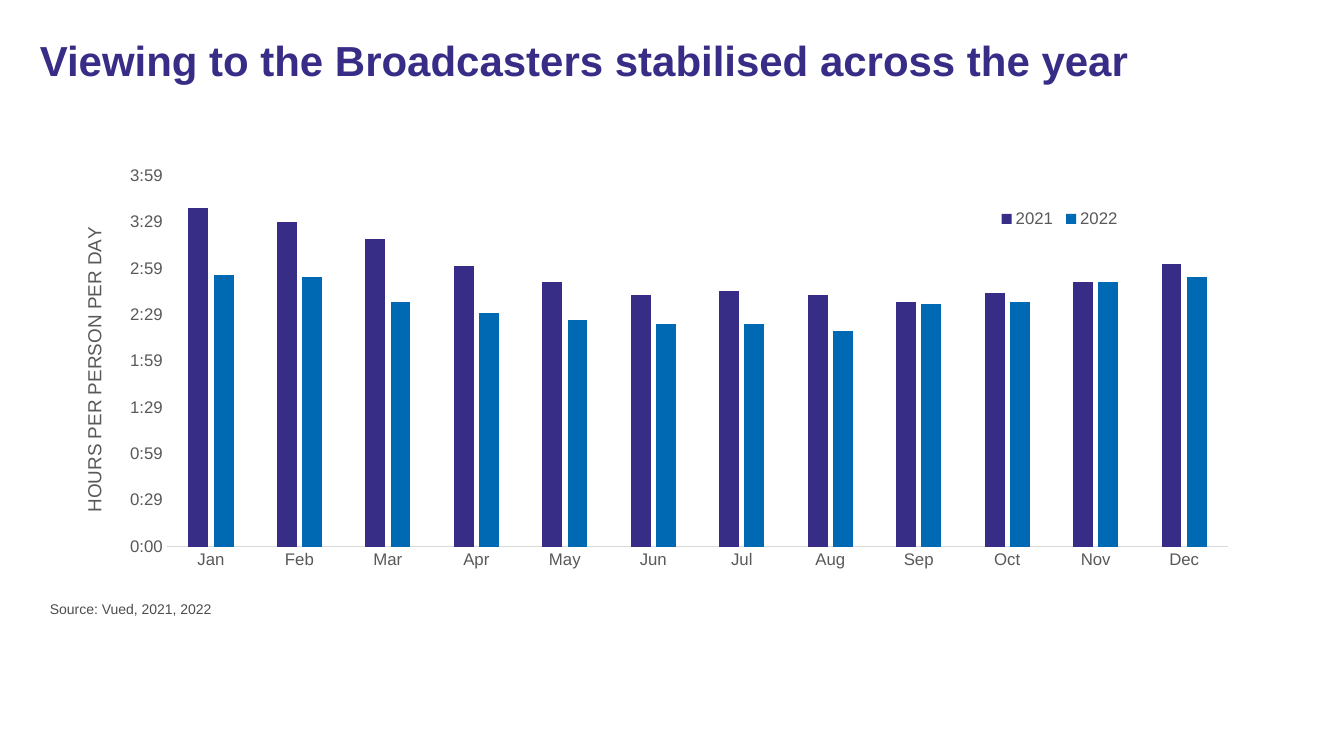
from lxml import etree
from pptx import Presentation
from pptx.chart.data import CategoryChartData
from pptx.dml.color import RGBColor
from pptx.enum.chart import XL_CHART_TYPE, XL_LEGEND_POSITION, XL_TICK_MARK
from pptx.enum.text import MSO_ANCHOR
from pptx.oxml.ns import qn
from pptx.util import Emu, Pt

COLUMNS = XL_CHART_TYPE.COLUMN_CLUSTERED
BOTTOM = XL_LEGEND_POSITION.BOTTOM
NO_TICK = XL_TICK_MARK.NONE
TOP = MSO_ANCHOR.TOP

EMU_PER_PX = 914400 / 100.8
FONT = "Arial"
COLORS = {
    "purple": "372D87",
    "blue": "0069B4",
    "label": "595959",
    "source": "4D4D4D",
    "axis": "D9D9D9",
}
MONTHS = ["Jan", "Feb", "Mar", "Apr", "May", "Jun",
          "Jul", "Aug", "Sep", "Oct", "Nov", "Dec"]
VIEWING = {
    "2021": ("purple", [0.152, 0.146, 0.138, 0.126, 0.119, 0.113,
                        0.115, 0.113, 0.11, 0.114, 0.119, 0.127]),
    "2022": ("blue", [0.122, 0.121, 0.11, 0.105, 0.102, 0.1,
                      0.1, 0.097, 0.109, 0.11, 0.119, 0.121]),
}
HALF_HOUR = 0.020833


def px(length):
    return Emu(round(length * EMU_PER_PX))


def color(name):
    return RGBColor.from_string(COLORS[name])


def style_font(font, size, color_name, bold=False):
    font.name = FONT
    font.size = Pt(size)
    font.bold = bold
    font.color.rgb = color(color_name)


def add_text(page, text, *, left, top, width, height, size, color_name,
             bold=False, line_spacing=1.0):
    box = page.shapes.add_textbox(px(left), px(top), px(width), px(height))
    frame = box.text_frame
    frame.word_wrap = True
    frame.vertical_anchor = TOP
    para = frame.paragraphs[0]
    para.line_spacing = line_spacing
    span = para.add_run()
    span.text = text
    style_font(span.font, size, color_name, bold)


def place(element, index, **settings):
    for old in element.findall(qn("c:layout")):
        element.remove(old)
    layout = etree.Element(qn("c:layout"))
    manual = etree.SubElement(layout, qn("c:manualLayout"))
    for tag, value in settings.items():
        etree.SubElement(manual, qn(f"c:{tag}")).set("val", str(value))
    element.insert(index, layout)


def style_category_axis(axis):
    axis.major_tick_mark = NO_TICK
    axis.minor_tick_mark = NO_TICK
    axis.format.line.color.rgb = color("axis")
    axis.format.line.width = Pt(0.75)
    style_font(axis.tick_labels.font, 12, "label")


def style_value_axis(axis):
    axis.minimum_scale = 0
    axis.maximum_scale = 8 * HALF_HOUR
    axis.major_unit = HALF_HOUR
    axis.has_major_gridlines = False
    axis.major_tick_mark = NO_TICK
    axis.minor_tick_mark = NO_TICK
    axis.format.line.fill.background()
    axis.tick_labels.number_format = "h:mm"
    axis.tick_labels.number_format_is_linked = False
    style_font(axis.tick_labels.font, 12, "label")
    frame = axis.axis_title.text_frame
    frame.text = "HOURS PER PERSON PER DAY"
    style_font(frame.paragraphs[0].runs[0].font, 13.5, "label")
    place(axis.axis_title._element, 1,
          xMode="edge", yMode="edge", x=0.02, y=0.14)


def style_legend(chart):
    chart.has_legend = True
    legend = chart.legend
    legend.position = BOTTOM
    legend.include_in_layout = False
    style_font(legend.font, 12, "label")
    place(legend._element, 1,
          xMode="edge", yMode="edge", x=0.79, y=0.1, w=0.11, h=0.06)


def add_viewing_chart(page, *, left, top, width, height):
    data = CategoryChartData(number_format="h:mm")
    data.categories = MONTHS
    for year, (_, values) in VIEWING.items():
        data.add_series(year, values)
    chart = page.shapes.add_chart(
        COLUMNS, px(left), px(top), px(width), px(height), data).chart
    chart.has_title = False
    chart.font.name = FONT
    chart.font.size = Pt(10)
    plot = chart.plots[0]
    plot.gap_width = 219
    plot.overlap = -27
    plot.vary_by_categories = False
    for series in plot.series:
        series.format.fill.solid()
        series.format.fill.fore_color.rgb = color(VIEWING[series.name][0])
    style_category_axis(chart.category_axis)
    style_value_axis(chart.value_axis)
    style_legend(chart)
    place(plot._element.getparent(), 0, layoutTarget="inner",
          xMode="edge", yMode="edge", x=0.094, y=0.036, w=0.893, h=0.805)


def main():
    deck = Presentation()
    deck.slide_width = px(1344)
    deck.slide_height = px(756)
    page = deck.slides.add_slide(deck.slide_layouts[6])
    add_text(page, "Viewing to the Broadcasters stabilised across the year",
             left=30, top=35, width=1250, height=113, size=30,
             color_name="purple", bold=True, line_spacing=0.9)
    add_text(page, "Source: Vued, 2021, 2022",
             left=40, top=596, width=1250, height=33, size=10,
             color_name="source")
    add_viewing_chart(page, left=55, top=159, width=1189, height=461)
    deck.save("out.pptx")


if __name__ == "__main__":
    main()
